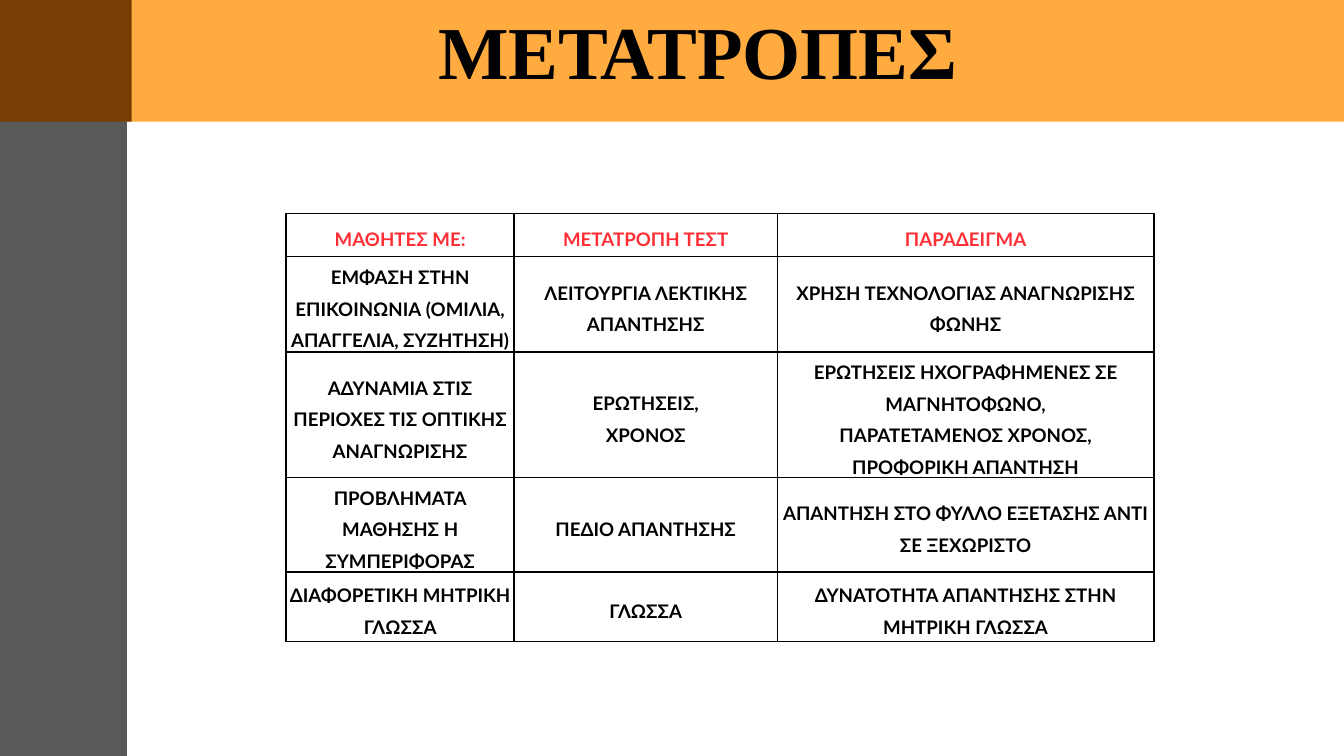
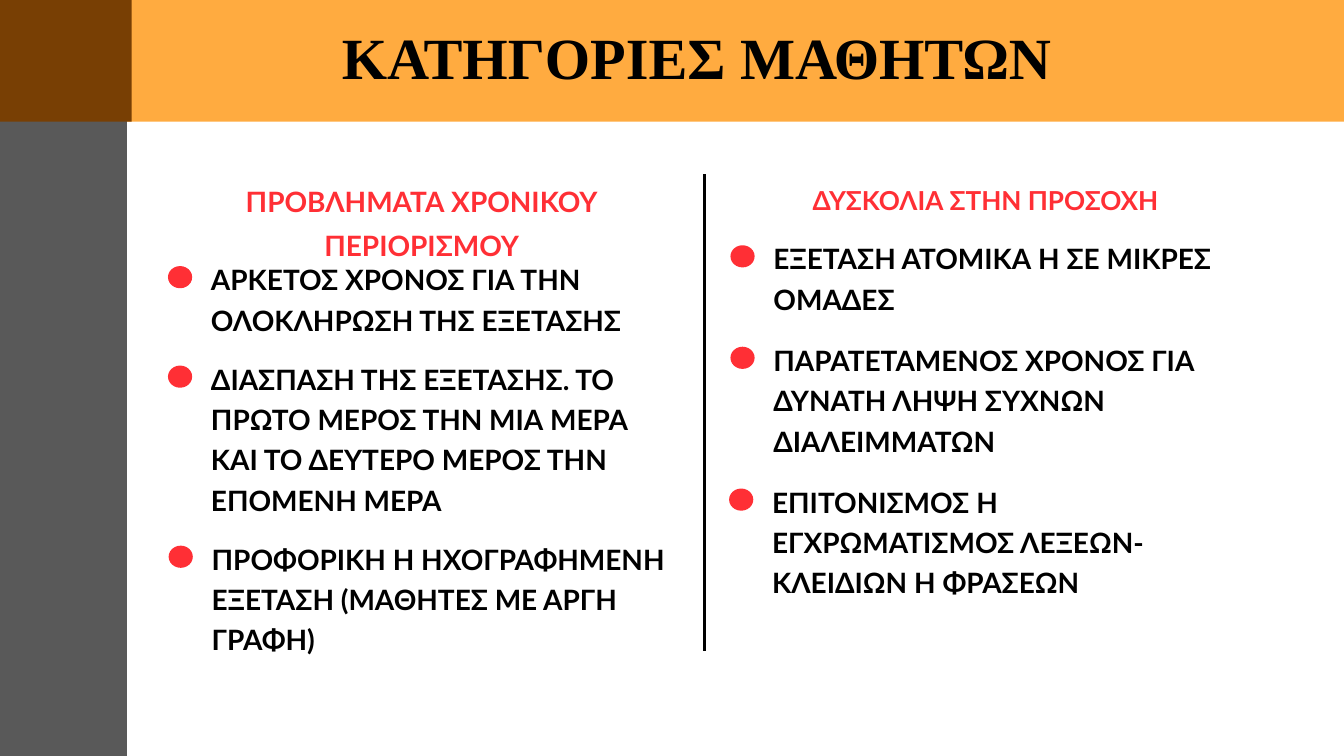
import pptx
import pptx.util
import pptx.dml.color
import pptx.enum.shapes
import pptx.enum.text
import pptx.oxml
import pptx.oxml.ns

Inches = pptx.util.Inches
Pt = pptx.util.Pt
rgb = pptx.dml.color.RGBColor.from_string
SHAPE = pptx.enum.shapes.MSO_SHAPE
ALIGN = pptx.enum.text.PP_ALIGN

ORANGE, BROWN, GREY = "FFAB40", "783F04", "595959"
RED, BLACK = "FF2F35", "000000"
BODY, SERIF = "Lato", "Times New Roman"
BANDS = [
    (1.89, 0, 18.11, 1.81, ORANGE),
    (0, 0.03, 1.89, 11.22, GREY),
    (0, 0, 1.96, 1.81, BROWN),
]


def add_filled(s, kind, x, y, w, h, color):
    sp = s.shapes.add_shape(kind, Inches(x), Inches(y), Inches(w), Inches(h))
    sp.shadow.inherit = False
    sp.fill.solid()
    sp.fill.fore_color.rgb = rgb(color)
    sp.line.fill.background()


def write(tf, text, size, color, spacing, align=ALIGN.CENTER, font=BODY):
    tf.word_wrap = True
    tf.margin_left = tf.margin_right = tf.margin_top = tf.margin_bottom = 0
    for i, line in enumerate(text.split("\n")):
        p = tf.add_paragraph() if i else tf.paragraphs[0]
        p.alignment = align
        p.line_spacing = spacing
        r = p.add_run()
        r.text = line
        r.font.name = font
        r.font.size = Pt(size)
        r.font.bold = True
        r.font.color.rgb = rgb(color)


prs = pptx.Presentation()
prs.slide_width = Inches(20)
prs.slide_height = Inches(11.25)

titles = [
    ("ΜΕΤΑΤΡΟΠΕΣ", 80, 1.81, 0.32, 17.16, 1.09),
    ("ΚΑΤΗΓΟΡΙΕΣ ΜΑΘΗΤΩΝ", 62.5, 3.53, 0.51, 13.68, 0.85),
]
for title, size, x, y, w, h in titles:
    s = prs.slides.add_slide(prs.slide_layouts[6])
    for *box, color in BANDS:
        add_filled(s, SHAPE.RECTANGLE, *box, color)
    tb = s.shapes.add_textbox(Inches(x), Inches(y), Inches(w), Inches(h))
    write(tb.text_frame, title, size, BLACK, 0.81, font=SERIF)

conversions, categories = prs.slides

col_widths = [3.39, 3.92, 5.6]
row_heights = [0.64, 1.42, 1.8, 1.41, 1.03]
rows = [
    ["ΜΑΘΗΤΕΣ ΜΕ:", "ΜΕΤΑΤΡΟΠΗ ΤΕΣΤ", "ΠΑΡΑΔΕΙΓΜΑ"],
    ["ΕΜΦΑΣΗ ΣΤΗΝ ΕΠΙΚΟΙΝΩΝΙΑ (ΟΜΙΛΙΑ, ΑΠΑΓΓΕΛΙΑ, ΣΥΖΗΤΗΣΗ)",
     "ΛΕΙΤΟΥΡΓΙΑ ΛΕΚΤΙΚΗΣ ΑΠΑΝΤΗΣΗΣ",
     "ΧΡΗΣΗ ΤΕΧΝΟΛΟΓΙΑΣ ΑΝΑΓΝΩΡΙΣΗΣ ΦΩΝΗΣ"],
    ["ΑΔΥΝΑΜΙΑ ΣΤΙΣ ΠΕΡΙΟΧΕΣ ΤΙΣ ΟΠΤΙΚΗΣ ΑΝΑΓΝΩΡΙΣΗΣ",
     "ΕΡΩΤΗΣΕΙΣ,\nΧΡΟΝΟΣ",
     "ΕΡΩΤΗΣΕΙΣ ΗΧΟΓΡΑΦΗΜΕΝΕΣ ΣΕ ΜΑΓΝΗΤΟΦΩΝΟ,\nΠΑΡΑΤΕΤΑΜΕΝΟΣ ΧΡΟΝΟΣ,\nΠΡΟΦΟΡΙΚΗ ΑΠΑΝΤΗΣΗ"],
    ["ΠΡΟΒΛΗΜΑΤΑ ΜΑΘΗΣΗΣ Ή ΣΥΜΠΕΡΙΦΟΡΑΣ",
     "ΠΕΔΙΟ ΑΠΑΝΤΗΣΗΣ",
     "ΑΠΑΝΤΗΣΗ ΣΤΟ ΦΥΛΛΟ ΕΞΕΤΑΣΗΣ ΑΝΤΙ ΣΕ ΞΕΧΩΡΙΣΤΟ"],
    ["ΔΙΑΦΟΡΕΤΙΚΗ ΜΗΤΡΙΚΗ ΓΛΩΣΣΑ",
     "ΓΛΩΣΣΑ",
     "ΔΥΝΑΤΟΤΗΤΑ ΑΠΑΝΤΗΣΗΣ ΣΤΗΝ ΜΗΤΡΙΚΗ ΓΛΩΣΣΑ"],
]
table = conversions.shapes.add_table(
    len(rows), len(col_widths), Inches(4.26), Inches(3.18),
    Inches(sum(col_widths)), Inches(sum(row_heights))).table
table.first_row = table.horz_banding = False
for col, width in zip(table.columns, col_widths):
    col.width = Inches(width)
for row, height in zip(table.rows, row_heights):
    row.height = Inches(height)
for i, texts in enumerate(rows):
    for j, text in enumerate(texts):
        cell = table.cell(i, j)
        cell.margin_left = cell.margin_right = cell.margin_top = cell.margin_bottom = 0
        cell.vertical_anchor = pptx.enum.text.MSO_ANCHOR.MIDDLE
        write(cell.text_frame, text, 20, BLACK if i else RED, 1.4)
        tcPr = cell._tc.get_or_add_tcPr()
        for side in ("lnL", "lnR", "lnT", "lnB"):
            tcPr.append(pptx.oxml.parse_xml(
                f'<a:{side} {pptx.oxml.ns.nsdecls("a")} w="{Pt(1.95)}"><a:solidFill>'
                f'<a:srgbClr val="{BLACK}"/></a:solidFill></a:{side}>'))
        cell.fill.background()

divider = categories.shapes.add_connector(
    pptx.enum.shapes.MSO_CONNECTOR.STRAIGHT,
    Inches(10.48), Inches(2.59), Inches(10.48), Inches(9.69))
divider.line.color.rgb = rgb(BLACK)
divider.line.width = Pt(3)
divider._element.spPr.append(
    pptx.oxml.parse_xml(f'<a:effectLst {pptx.oxml.ns.nsdecls("a")}/>'))

headings = [
    ("ΠΡΟΒΛΗΜΑΤΑ ΧΡΟΝΙΚΟΥ ΠΕΡΙΟΡΙΣΜΟΥ", 30, 2.55, 7.45, 1.16),
    ("ΔΥΣΚΟΛΙΑ ΣΤΗΝ ΠΡΟΣΟΧΗ", 28, 10.82, 7.69, 0.47),
]
for heading, size, x, w, h in headings:
    tb = categories.shapes.add_textbox(Inches(x), Inches(2.6), Inches(w), Inches(h))
    write(tb.text_frame, heading, size, RED, 1.3)

points = [
    ("ΑΡΚΕΤΟΣ ΧΡΟΝΟΣ ΓΙΑ ΤΗΝ ΟΛΟΚΛΗΡΩΣΗ ΤΗΣ ΕΞΕΤΑΣΗΣ", 3.14, 3.81, 6.34, 1.11),
    ("ΔΙΑΣΠΑΣΗ ΤΗΣ ΕΞΕΤΑΣΗΣ. ΤΟ ΠΡΩΤΟ ΜΕΡΟΣ ΤΗΝ ΜΙΑ ΜΕΡΑ ΚΑΙ ΤΟ ΔΕΥΤΕΡΟ ΜΕΡΟΣ ΤΗΝ ΕΠΟΜΕΝΗ ΜΕΡΑ",
     3.14, 5.29, 6.94, 2.32),
    ("ΠΡΟΦΟΡΙΚΗ Ή ΗΧΟΓΡΑΦΗΜΕΝΗ ΕΞΕΤΑΣΗ (ΜΑΘΗΤΕΣ ΜΕ ΑΡΓΗ ΓΡΑΦΗ)", 3.15, 7.97, 6.94, 1.72),
    ("ΕΞΕΤΑΣΗ ΑΤΟΜΙΚΑ Ή ΣΕ ΜΙΚΡΕΣ ΟΜΑΔΕΣ", 11.51, 3.5, 6.94, 1.11),
    ("ΠΑΡΑΤΕΤΑΜΕΝΟΣ ΧΡΟΝΟΣ ΓΙΑ ΔΥΝΑΤΗ ΛΗΨΗ ΣΥΧΝΩΝ ΔΙΑΛΕΙΜΜΑΤΩΝ", 11.51, 5.01, 6.94, 1.72),
    ("ΕΠΙΤΟΝΙΣΜΟΣ Ή ΕΓΧΡΩΜΑΤΙΣΜΟΣ ΛΕΞΕΩΝ-ΚΛΕΙΔΙΩΝ Ή ΦΡΑΣΕΩΝ", 11.49, 7.12, 6.94, 1.72),
]
for text, x, y, w, h in points:
    add_filled(categories, SHAPE.OVAL, x - 0.64, y + 0.15, 0.36, 0.33, RED)
    tb = categories.shapes.add_textbox(Inches(x), Inches(y), Inches(w), Inches(h))
    write(tb.text_frame, text, 30, BLACK, 1.2, ALIGN.LEFT)

prs.save("out.pptx")
